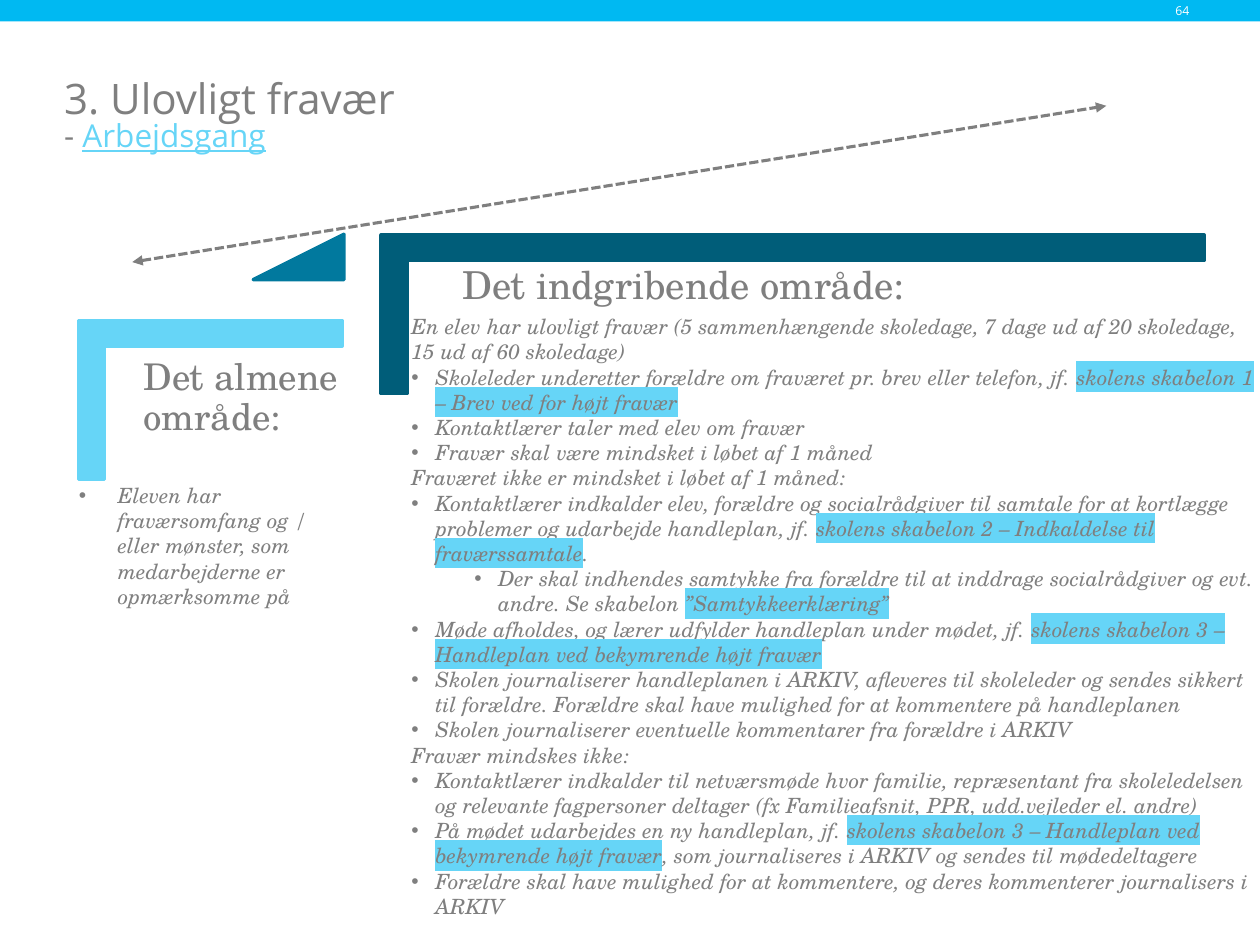
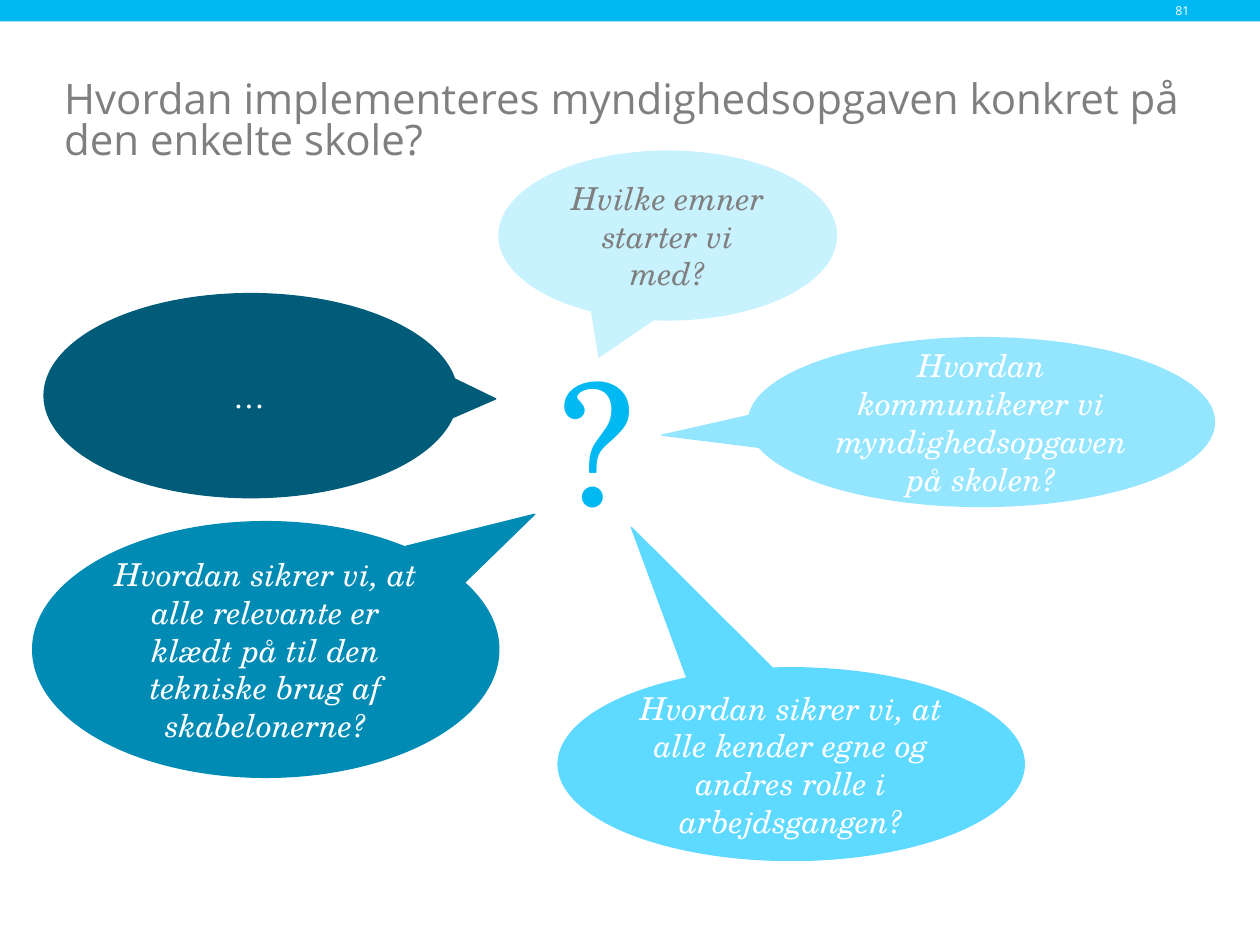
from dataclasses import dataclass

from lxml.etree import SubElement
from pptx import Presentation
from pptx.dml.color import RGBColor
from pptx.enum.dml import MSO_LINE
from pptx.enum.shapes import MSO_CONNECTOR, MSO_SHAPE
from pptx.enum.text import MSO_ANCHOR, MSO_AUTO_SIZE, PP_ALIGN
from pptx.oxml.ns import qn
from pptx.util import Inches, Pt


@dataclass(frozen=True)
class Theme:
    heading_font: str = "Open Sans"
    body_font: str = "TeX Gyre Schola"
    grey: str = "7F7F7F"
    white: str = "FFFFFF"
    accent: str = "00B9F2"
    light: str = "66D5F7"
    medium: str = "01799E"
    dark: str = "005D79"
    # From the palest bubble to the darkest
    bubbles: tuple = ("C9F2FF", "94E6FF", "5ED9FF", "008BB5", "005C79")
    title: int = 24
    subtitle: int = 18
    question: int = 18
    body: int = 12
    number: int = 7
    mark: int = 96


@dataclass(frozen=True)
class Box:
    """An area counted in grid cells: 100 columns by 75 rows per slide."""
    x: float
    y: float
    w: float
    h: float

    def inner(self, x, y, w, h):
        return Box(self.x + x, self.y + y, w, h)

    def emu(self):
        return [cells(v) for v in (self.x, self.y, self.w, self.h)]


def cells(count):
    return Inches(count / 10)


THEME = Theme()
PAGE = Box(0, 0, 100, 75)


# Text helpers
def add_run(paragraph, text, size, font=THEME.body_font, color=THEME.grey,
            italic=False, underline=False, highlight=None):
    run = paragraph.add_run()
    run.text = text
    run.font.size = Pt(size)
    run.font.name = font
    run.font.italic = italic
    run.font.underline = underline
    run.font.color.rgb = RGBColor.from_string(color)
    if highlight:
        properties = run._r.get_or_add_rPr()
        mark = SubElement(properties, qn("a:highlight"))
        SubElement(mark, qn("a:srgbClr"), val=highlight)
        properties.find(qn("a:solidFill")).addnext(mark)


def add_text_area(slide, box, inset=0, grow=False):
    frame = slide.shapes.add_textbox(*box.emu()).text_frame
    frame.word_wrap = True
    frame.margin_left = frame.margin_right = Inches(inset)
    frame.margin_top = frame.margin_bottom = Inches(inset)
    frame.auto_size = MSO_AUTO_SIZE.SHAPE_TO_FIT_TEXT if grow else MSO_AUTO_SIZE.NONE
    return frame


def add_bullet(paragraph, left, hang):
    properties = paragraph._p.get_or_add_pPr()
    properties.set("marL", str(Inches(left)))
    properties.set("indent", str(-Inches(hang)))
    SubElement(properties, qn("a:buFont"), typeface="Arial")
    SubElement(properties, qn("a:buChar"), char="•")


def add_workflow_text(slide, box, lines, hang):
    """Each line is (level, pieces); level None has no bullet, odd pieces are marked."""
    frame = add_text_area(slide, box, grow=True)
    for index, (level, pieces) in enumerate(lines):
        paragraph = frame.add_paragraph() if index else frame.paragraphs[0]
        if level is not None:
            paragraph.level = level
            add_bullet(paragraph, hang + level * 0.5, hang)
        for order, piece in enumerate(pieces):
            add_run(paragraph, piece, THEME.body, italic=True,
                    highlight=THEME.light if order % 2 else None)


# Shape helpers
def add_filled(slide, kind, box, color, line_width, adjustments=()):
    shape = slide.shapes.add_shape(kind, *box.emu())
    shape.shadow.inherit = False
    shape.fill.solid()
    shape.fill.fore_color.rgb = RGBColor.from_string(color)
    if line_width:
        shape.line.color.rgb = RGBColor.from_string(color)
        shape.line.width = Pt(line_width)
    else:
        shape.line.fill.background()
    for index, value in enumerate(adjustments):
        shape.adjustments[index] = value
    return shape


def add_bracket(slide, box, color):
    """An L-shape turned a quarter so that its corner is at the top left."""
    shift = (box.w - box.h) / 2
    upright = box.inner(shift, -shift, box.h, box.w)
    bracket = add_filled(slide, MSO_SHAPE.CORNER, upright, color, 2, (0.161, 0.161))
    bracket.rotation = 90


def add_area(slide, box, color, heading, size, heading_box):
    add_bracket(slide, box, color)
    paragraph = add_text_area(slide, box.inner(*heading_box), 0.09).paragraphs[0]
    paragraph.line_spacing = 0.9
    add_run(paragraph, heading, size)


def add_progress_arrow(slide, start, end):
    arrow = slide.shapes.add_connector(
        MSO_CONNECTOR.STRAIGHT, *(cells(v) for v in start + end))
    arrow.line.color.rgb = RGBColor.from_string(THEME.grey)
    arrow.line.width = Pt(1.75)
    arrow.line.dash_style = MSO_LINE.SQUARE_DOT
    outline = arrow._element.spPr.find(qn("a:ln"))
    outline.find(qn("a:prstDash")).set("val", "sysDash")
    for tip in ("a:headEnd", "a:tailEnd"):
        SubElement(outline, qn(tip), type="triangle")
    SubElement(arrow._element.spPr, qn("a:effectLst"))


def add_bubble(slide, box, color, question, pointer, text_color=THEME.white):
    bubble = add_filled(slide, MSO_SHAPE.OVAL_CALLOUT, box, color, 0.75, pointer)
    frame = bubble.text_frame
    frame.word_wrap = True
    frame.vertical_anchor = MSO_ANCHOR.MIDDLE
    paragraph = frame.paragraphs[0]
    paragraph.alignment = PP_ALIGN.CENTER
    add_run(paragraph, question, THEME.question, color=text_color, italic=True)


# Band, page number and title shared by both slides
def start_slide(deck, number, title):
    slide = deck.slides.add_slide(deck.slide_layouts[6])
    band = PAGE.inner(0, 0, PAGE.w, 1.7)
    add_filled(slide, MSO_SHAPE.RECTANGLE, band, THEME.accent, 0)

    heading = add_text_area(slide, PAGE.inner(5.1, 6.4, 89.4, 12.2)).paragraphs[0]
    heading.line_spacing = 0.83
    add_run(heading, title, THEME.title, THEME.heading_font)

    page_number = add_text_area(slide, band.inner(91, 0, 3.4, band.h))
    page_number.vertical_anchor = MSO_ANCHOR.MIDDLE
    page_number.paragraphs[0].alignment = PP_ALIGN.RIGHT
    add_run(page_number.paragraphs[0], number, THEME.number,
            THEME.heading_font, THEME.white)
    return slide, heading


GENERAL_LINES = [
    (0, ["Eleven har fraværsomfang og / eller mønster, som medarbejderne er "
         "opmærksomme på"]),
]
INTERVENTION_LINES = [
    (None, ["En elev har ulovligt fravær (5 sammenhængende skoledage, 7 dage ud af "
            "20 skoledage, 15 ud af 60 skoledage)"]),
    (0, ["Skoleleder underetter forældre om fraværet pr. brev eller telefon, jf. ",
         "skolens skabelon 1 – Brev ved for højt fravær"]),
    (0, ["Kontaktlærer taler med elev om fravær"]),
    (0, ["Fravær skal være mindsket i løbet af 1 måned"]),
    (None, ["Fraværet ikke er mindsket i løbet af 1 måned:"]),
    (0, ["Kontaktlærer indkalder elev, forældre og socialrådgiver til samtale for at "
         "kortlægge problemer og udarbejde handleplan, jf. ",
         "skolens skabelon 2 – Indkaldelse til fraværssamtale", "."]),
    (1, ["Der skal indhendes samtykke fra forældre til at inddrage socialrådgiver og "
         "evt. andre. Se skabelon ", "”Samtykkeerklæring”"]),
    (0, ["Møde afholdes, og lærer udfylder handleplan under mødet, jf. ",
         "skolens skabelon 3 – Handleplan ved bekymrende højt fravær"]),
    (0, ["Skolen journaliserer handleplanen i ARKIV, afleveres til skoleleder og "
         "sendes sikkert til forældre. Forældre skal have mulighed for at kommentere "
         "på handleplanen"]),
    (0, ["Skolen journaliserer eventuelle kommentarer fra forældre i ARKIV"]),
    (None, ["Fravær mindskes ikke:"]),
    (0, ["Kontaktlærer indkalder til netværsmøde hvor familie, repræsentant fra "
         "skoleledelsen og relevante fagpersoner deltager (fx Familieafsnit, PPR, "
         "udd.vejleder el. andre)"]),
    (0, ["På mødet udarbejdes en ny handleplan, jf. ",
         "skolens skabelon 3 – Handleplan ved bekymrende højt fravær",
         ", som journaliseres i ARKIV og sendes til mødedeltagere"]),
    (0, ["Forældre skal have mulighed for at kommentere, og deres kommenterer "
         "journalisers i ARKIV"]),
]


def build_workflow(deck):
    slide, heading = start_slide(deck, "64", "3. Ulovligt fravær")
    heading.add_line_break()
    add_run(heading, "- ", THEME.subtitle, THEME.heading_font)
    add_run(heading, "Arbejdsgang", THEME.subtitle, THEME.heading_font,
            THEME.light, underline=True)

    # Two rising areas with the step between them
    general = PAGE.inner(6.25, 25.45, 20.9, 12.6)
    intervention = PAGE.inner(30.25, 18.65, 65.3, 12.6)
    add_area(slide, general, THEME.light, "Det almene område:", 21,
             (4.25, 2.15, 18.3, 16.6))
    add_filled(slide, MSO_SHAPE.ISOSCELES_TRIANGLE, PAGE.inner(20.1, 18.6, 7.2, 3.6),
               THEME.medium, 2, (1,))
    add_area(slide, intervention, THEME.dark, "Det indgribende område:", 22,
             (5.55, 1.55, 59.8, 16.6))
    add_progress_arrow(slide, (10.5, 20.8), (87.8, 8.4))

    add_workflow_text(slide, general.inner(0, 12.85, 20.9, 10.1), GENERAL_LINES, 0.31)
    add_workflow_text(slide, intervention.inner(2.4, 6.25, 66.9, 48.5),
                      INTERVENTION_LINES, 0.19)


def build_questions(deck):
    slide, _ = start_slide(
        deck, "81",
        "Hvordan implementeres myndighedsopgaven konkret på den enkelte skole?")
    question_mark = add_text_area(slide, PAGE.inner(44.5, 26.8, 7.1, 16.2), grow=True)
    add_run(question_mark.paragraphs[0], "?", THEME.mark, color=THEME.accent)

    # Bubbles clockwise from the top, each pointing at the question mark
    topics, communication, roles, technique, open_end = THEME.bubbles
    add_bubble(slide, PAGE.inner(39.6, 12, 26.8, 13.4), topics,
               "Hvilke emner starter vi med?", (-0.204, 0.72), THEME.grey)
    add_bubble(slide, PAGE.inner(59.4, 26.8, 37, 13.4), communication,
               "Hvordan kommunikerer vi myndighedsopgaven på skolen?",
               (-0.686, 0.078))
    add_bubble(slide, PAGE.inner(44.3, 53, 37, 15.3), roles,
               "Hvordan sikrer vi, at alle kender egne og andres rolle i "
               "arbejdsgangen?", (-0.343, -1.229))
    add_bubble(slide, PAGE.inner(2.6, 41.4, 37, 20.3), technique,
               "Hvordan sikrer vi, at alle relevante er klædt på til den tekniske "
               "brug af skabelonerne?", (0.577, -0.529))
    add_bubble(slide, PAGE.inner(3.5, 23.3, 32.8, 16.2), open_end, "…",
               (0.593, 0.016))


def main():
    deck = Presentation()
    deck.slide_width, deck.slide_height = cells(PAGE.w), cells(PAGE.h)
    build_workflow(deck)
    build_questions(deck)
    deck.save("out.pptx")


if __name__ == "__main__":
    main()
